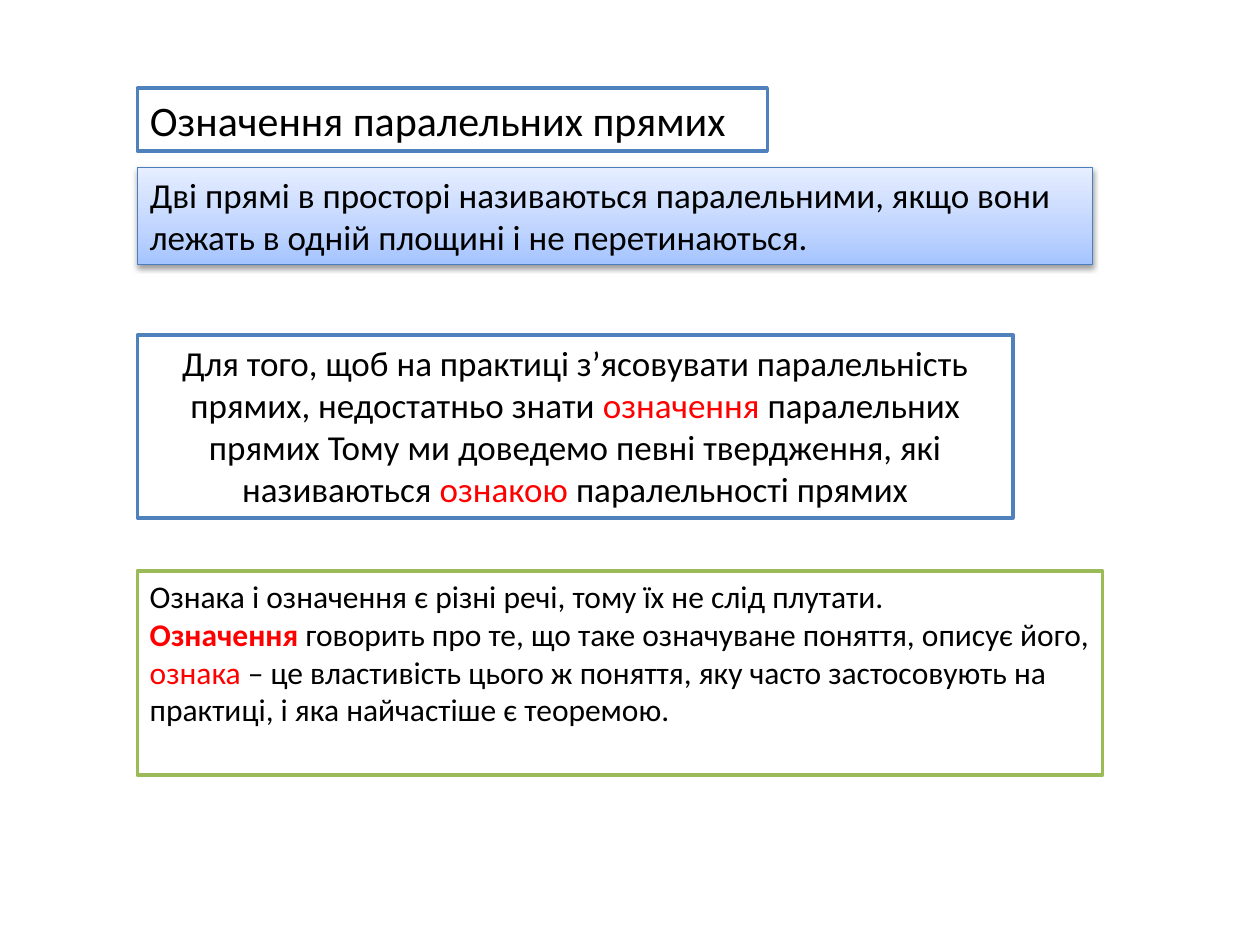
from lxml import etree
from pptx import Presentation
from pptx import util as u
from pptx.dml.color import RGBColor
from pptx.enum import shapes, text
from pptx.oxml import parse_xml
from pptx.oxml.ns import nsdecls, qn

BLACK = RGBColor(0x00, 0x00, 0x00)
WHITE = RGBColor(0xFF, 0xFF, 0xFF)
RED = RGBColor(0xFF, 0x00, 0x00)
BLUE = RGBColor(0x4F, 0x81, 0xBD)
EDGE = RGBColor(0x4B, 0x7E, 0xBC)
GREEN = RGBColor(0x9B, 0xBB, 0x59)
STOPS = [
    (0, RGBColor(0xA4, 0xC4, 0xFF)),
    (35, RGBColor(0xBF, 0xD4, 0xFF)),
    (100, RGBColor(0xE6, 0xEE, 0xFF)),
]
LEFT = 1.09
START, MID = text.PP_ALIGN.LEFT, text.PP_ALIGN.CENTER

prs = Presentation()
prs.slide_width, prs.slide_height = u.Inches(10), u.Inches(7.5)
slide = prs.slides.add_slide(prs.slide_layouts[5])


def style(box, top, width, height, line, weight, size, align, paras):
    box.left, box.top = u.Inches(LEFT), u.Inches(top)
    box.width, box.height = u.Inches(width), u.Inches(height)
    box.fill.solid()
    box.fill.fore_color.rgb = WHITE
    box.line.color.rgb = line
    box.line.width = u.Pt(weight)
    frame = box.text_frame
    frame.word_wrap = True
    frame.auto_size = text.MSO_AUTO_SIZE.NONE
    frame.vertical_anchor = text.MSO_ANCHOR.TOP
    for i, parts in enumerate(paras):
        para = frame.add_paragraph() if i else frame.paragraphs[0]
        para.alignment = align
        for words, color, bold in parts:
            run = para.add_run()
            run.text = words
            run.font.name = "Calibri"
            run.font.size = u.Pt(size)
            run.font.bold = bold
            run.font.color.rgb = color


style(slide.shapes.title, 0.7, 5, 0.5, BLUE, 2, 24, START,
      [[("Означення паралельних прямих", BLACK, False)]])

rule = [[("Дві прямі в просторі називаються паралельними, якщо вони "
          "лежать в одній площині і не перетинаються.", BLACK, False)]]
need = [[
    ("Для того, щоб на практиці з’ясовувати паралельність прямих, "
     "недостатньо знати ", BLACK, False),
    ("означення ", RED, False),
    ("паралельних прямих Тому ми доведемо певні твердження, які "
     "називаються ", BLACK, False),
    ("ознакою ", RED, False),
    ("паралельності прямих", BLACK, False),
]]
terms = [
    [("Ознака і означення є різні речі, тому їх не слід плутати.",
      BLACK, False)],
    [("Означення ", RED, True),
     ("говорить про те, що таке означуване поняття, описує його,",
      BLACK, False)],
    [("ознака ", RED, False),
     ("– це властивість цього ж поняття, яку часто застосовують на "
      "практиці, і яка найчастіше є теоремою.", BLACK, False)],
]

boxes = []
for spec_row in [
    (1.33, 7.58, 0.77, EDGE, 0.75, 20, START, rule),
    (2.66, 6.95, 1.45, BLUE, 2, 20, MID, need),
    (4.53, 7.66, 1.62, GREEN, 2, 18, START, terms),
]:
    box = slide.shapes.add_shape(shapes.MSO_SHAPE.RECTANGLE, 0, 0, 0, 0)
    box.shadow.inherit = False
    style(box, *spec_row)
    boxes.append(box)

props = boxes[0].fill._xPr
stops = "".join(
    f'<a:gs pos="{pos * 1000}"><a:srgbClr val="{color}"/></a:gs>'
    for pos, color in STOPS)
grad = parse_xml(
    f'<a:gradFill {nsdecls("a")} rotWithShape="1"><a:gsLst>{stops}</a:gsLst>'
    '<a:lin ang="16200000" scaled="0"/></a:gradFill>')
props.replace(props.find(qn("a:solidFill")), grad)
shade = etree.SubElement(
    props.find(qn("a:effectLst")), qn("a:outerShdw"),
    blurRad=str(u.Pt(3.1)), dist=str(u.Pt(1.6)), dir="5400000",
    rotWithShape="0")
tint = etree.SubElement(shade, qn("a:srgbClr"), val=str(BLACK))
etree.SubElement(tint, qn("a:alpha"), val="38000")

prs.save("out.pptx")
